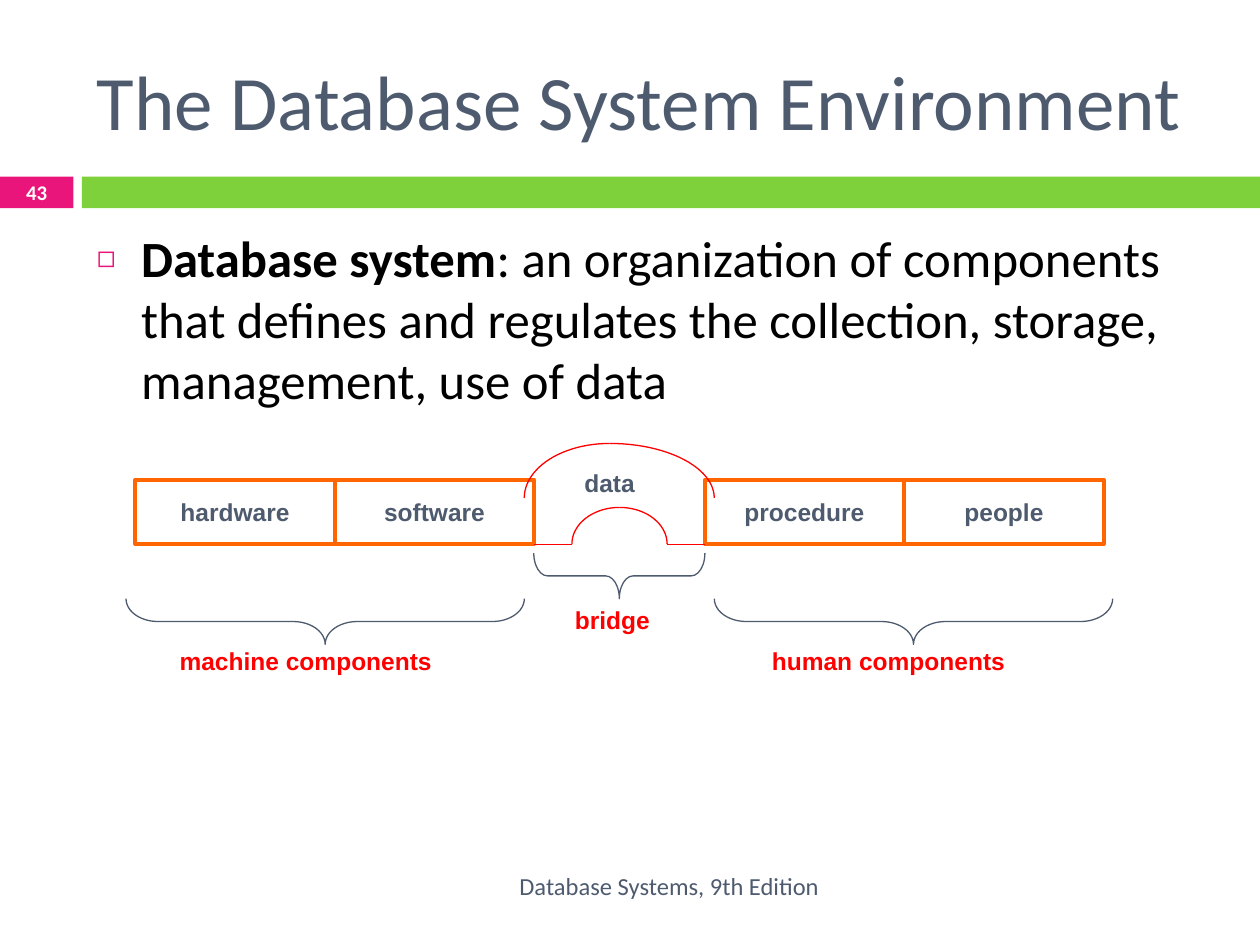
from dataclasses import dataclass
from math import cos, pi, sin

from lxml import etree
from pptx import Presentation
from pptx.dml.color import RGBColor
from pptx.enum.shapes import MSO_CONNECTOR, MSO_SHAPE
from pptx.enum.text import MSO_ANCHOR, MSO_AUTO_SIZE, PP_ALIGN
from pptx.oxml.ns import qn
from pptx.util import Cm, Pt

RECTANGLE = MSO_SHAPE.RECTANGLE
BRACE = MSO_SHAPE.RIGHT_BRACE
STRAIGHT = MSO_CONNECTOR.STRAIGHT
MIDDLE = MSO_ANCHOR.MIDDLE
TOP = MSO_ANCHOR.TOP
LEFT, CENTER, RIGHT = PP_ALIGN.LEFT, PP_ALIGN.CENTER, PP_ALIGN.RIGHT
NO_AUTOFIT = MSO_AUTO_SIZE.NONE


@dataclass(frozen=True)
class Theme:
    """Colours, fonts and sizes of the slide."""
    slate: str = "4E5B6F"
    pink: str = "EA157A"
    green: str = "7FD13B"
    orange: str = "FF6600"
    red: str = "FF0000"
    white: str = "FFFFFF"
    black: str = "000000"
    text_font: str = "Calibri"
    diagram_font: str = "Arial"
    title_size: float = 44
    body_size: float = 29
    label_size: float = 14
    number_size: float = 11.9
    cell_line: float = 2.25
    thin_line: float = 0.75


THEME = Theme()


def rgb(colour):
    """Turn a hex string into a colour."""
    return RGBColor.from_string(colour)


def style_runs(paragraph, size, colour, font=THEME.text_font, bold=False):
    """Format every run of a paragraph."""
    for run in paragraph.runs:
        run.font.name, run.font.size, run.font.bold = font, Pt(size), bold
        run.font.color.rgb = rgb(colour)


def place(shape, box):
    """Move a shape to a box given in centimetres."""
    shape.left, shape.top, shape.width, shape.height = map(Cm, box)


def outline(shape, colour, width):
    """Give a shape or connector a plain line."""
    shape.line.color.rgb = rgb(colour)
    shape.line.width = Pt(width)


def add_block(slide, box, fill):
    """Add a filled rectangle without a line."""
    block = slide.shapes.add_shape(RECTANGLE, *map(Cm, box))
    block.shadow.inherit = False
    block.fill.solid()
    block.fill.fore_color.rgb = rgb(fill)
    block.line.fill.background()
    return block


def add_label(slide, box, text, size, colour, font=THEME.text_font,
              bold=False, align=LEFT, anchor=TOP, wrap=False):
    """Add a one-line text box."""
    frame = slide.shapes.add_textbox(*map(Cm, box)).text_frame
    frame.word_wrap, frame.vertical_anchor = wrap, anchor
    frame.text = text
    frame.paragraphs[0].alignment = align
    style_runs(frame.paragraphs[0], size, colour, font, bold)


def fill_title(slide, box):
    """Write the slide title."""
    title = slide.shapes.title
    place(title, box)
    frame = title.text_frame
    frame.text = "The Database System Environment"
    frame.auto_size, frame.vertical_anchor = NO_AUTOFIT, MIDDLE
    frame.paragraphs[0].alignment = LEFT
    style_runs(frame.paragraphs[0], THEME.title_size, THEME.slate)


def add_band(slide, box):
    """Add the coloured band with the slide number."""
    left, top, width, height = box
    number_width, gap = 1.48, 0.17
    number_box = (left, top, number_width, height)
    bar_left = number_width + gap
    add_block(slide, number_box, THEME.pink)
    add_block(slide, (left + bar_left, top, width - bar_left, height), THEME.green)
    add_label(slide, number_box, "43", THEME.number_size, THEME.white,
              bold=True, align=CENTER, anchor=MIDDLE, wrap=True)


def fill_body(slide, box):
    """Write the bulleted definition."""
    body = slide.placeholders[1]
    place(body, box)
    frame = body.text_frame
    frame.auto_size = NO_AUTOFIT
    definition = frame.paragraphs[0]
    definition.space_before = Pt(7)
    for text in ("Database system", ": an organization of components that defines and "
                 "regulates the collection, storage, management, use of data"):
        definition.add_run().text = text
    style_runs(definition, THEME.body_size, THEME.black)
    definition.runs[0].font.bold = True
    properties = definition._p.get_or_add_pPr()
    properties.set("marL", str(Cm(0.89)))
    properties.set("indent", str(-Cm(0.89)))
    bullet_colour = etree.SubElement(properties, qn("a:buClr"))
    etree.SubElement(bullet_colour, qn("a:srgbClr"), val=THEME.pink)
    etree.SubElement(properties, qn("a:buSzPct"), val="60000")
    etree.SubElement(properties, qn("a:buChar"), char="◻")


def add_cell(slide, box, text):
    """Add one framed component."""
    cell = add_block(slide, box, THEME.white)
    outline(cell, THEME.orange, THEME.cell_line)
    frame = cell.text_frame
    frame.word_wrap, frame.vertical_anchor = False, MIDDLE
    frame.text = text
    frame.paragraphs[0].alignment = CENTER
    style_runs(frame.paragraphs[0], THEME.label_size, THEME.slate,
               THEME.diagram_font, True)


def add_quarter_arc(slide, crown, radius_x, radius_y):
    """Draw a quarter ellipse down from its crown; a negative radius goes left."""
    x, y = crown
    steps = 24
    angles = [pi / 2 * step / steps for step in range(steps + 1)]
    points = [(Cm(x + radius_x * sin(a)), Cm(y + radius_y * (1 - cos(a))))
              for a in angles]
    builder = slide.shapes.build_freeform(*points[0])
    builder.add_line_segments(points[1:], close=False)
    arc = builder.convert_to_shape()
    arc.shadow.inherit = False
    arc.fill.background()
    outline(arc, THEME.red, THEME.thin_line)


def add_sill(slide, start, end, y):
    """Draw a level line at the foot of the bridge."""
    sill = slide.shapes.add_connector(STRAIGHT, Cm(start), Cm(y), Cm(end), Cm(y))
    outline(sill, THEME.red, THEME.thin_line)
    etree.SubElement(sill._element.spPr, qn("a:effectLst"))


def add_brace(slide, box, curve):
    """Draw a brace that points down and fills the box."""
    left, top, width, height = box
    shift = (width - height) / 2
    brace = slide.shapes.add_shape(
        BRACE, Cm(left + shift), Cm(top - shift), Cm(height), Cm(width))
    brace.rotation = 90
    brace.adjustments[0] = curve
    brace.shadow.inherit = False
    brace.fill.background()
    outline(brace, THEME.slate, THEME.thin_line)


def add_diagram(slide, box):
    """Draw the five components, the bridge and the braces."""
    left, top, width, _ = box
    cell_width, cell_height, cell_top = 4.02, 1.3, top + 0.73
    for pair_left, names in ((0.19, ("hardware", "software")),
                             (11.67, ("procedure", "people"))):
        for column, name in enumerate(names):
            x = left + pair_left + column * cell_width
            add_cell(slide, (x, cell_top, cell_width, cell_height), name)

    outer_crown, inner_crown = (left + 9.75, top), (left + 9.95, top + 1.29)
    for crown, radius_x, radius_y in ((outer_crown, 2.11, 1.1), (outer_crown, -1.72, 1.1),
                                      (inner_crown, 0.96, 0.74), (inner_crown, -0.96, 0.74)):
        add_quarter_arc(slide, crown, radius_x, radius_y)
    for start, end in ((8.23, 8.99), (10.91, 11.67)):
        add_sill(slide, left + start, left + end, cell_top + cell_height)

    brace_width, brace_height = 8.03, 0.92
    for x, y, span, curve in ((0, 3.13, brace_width, 0.7),
                              (width - brace_width, 3.13, brace_width, 0.7),
                              (8.22, 2.21, 3.45, 0.3)):
        add_brace(slide, (left + x, top + y, span, brace_height), curve)
    for text, x, y, span, colour in (("data", 8.99, 0.37, 1.52, THEME.slate),
                                     ("machine components", 0.83, 3.96, 5.61, THEME.red),
                                     ("human components", 12.77, 3.96, 5.23, THEME.red),
                                     ("bridge", 8.8, 3.13, 2.21, THEME.red)):
        add_label(slide, (left + x, top + y, span, 0.86), text, THEME.label_size,
                  colour, THEME.diagram_font, True)


def main():
    """Build and save the slide."""
    deck = Presentation()
    deck.slide_width, deck.slide_height = Cm(25.4), Cm(19.05)
    slide = deck.slides.add_slide(deck.slide_layouts[1])
    add_band(slide, (0, 3.56, 25.4, 0.64))
    fill_title(slide, (1.7, 0.64, 22.66, 2.74))
    add_label(slide, (1.7, 17.35, 15.06, 1.02), "Database Systems, 9th Edition",
              THEME.label_size, THEME.slate, align=RIGHT, anchor=MIDDLE, wrap=True)
    fill_body(slide, (1.7, 4.45, 22.66, 12.5))
    add_diagram(slide, (2.54, 8.94, 19.89, 4.82))
    deck.save("out.pptx")


if __name__ == "__main__":
    main()
